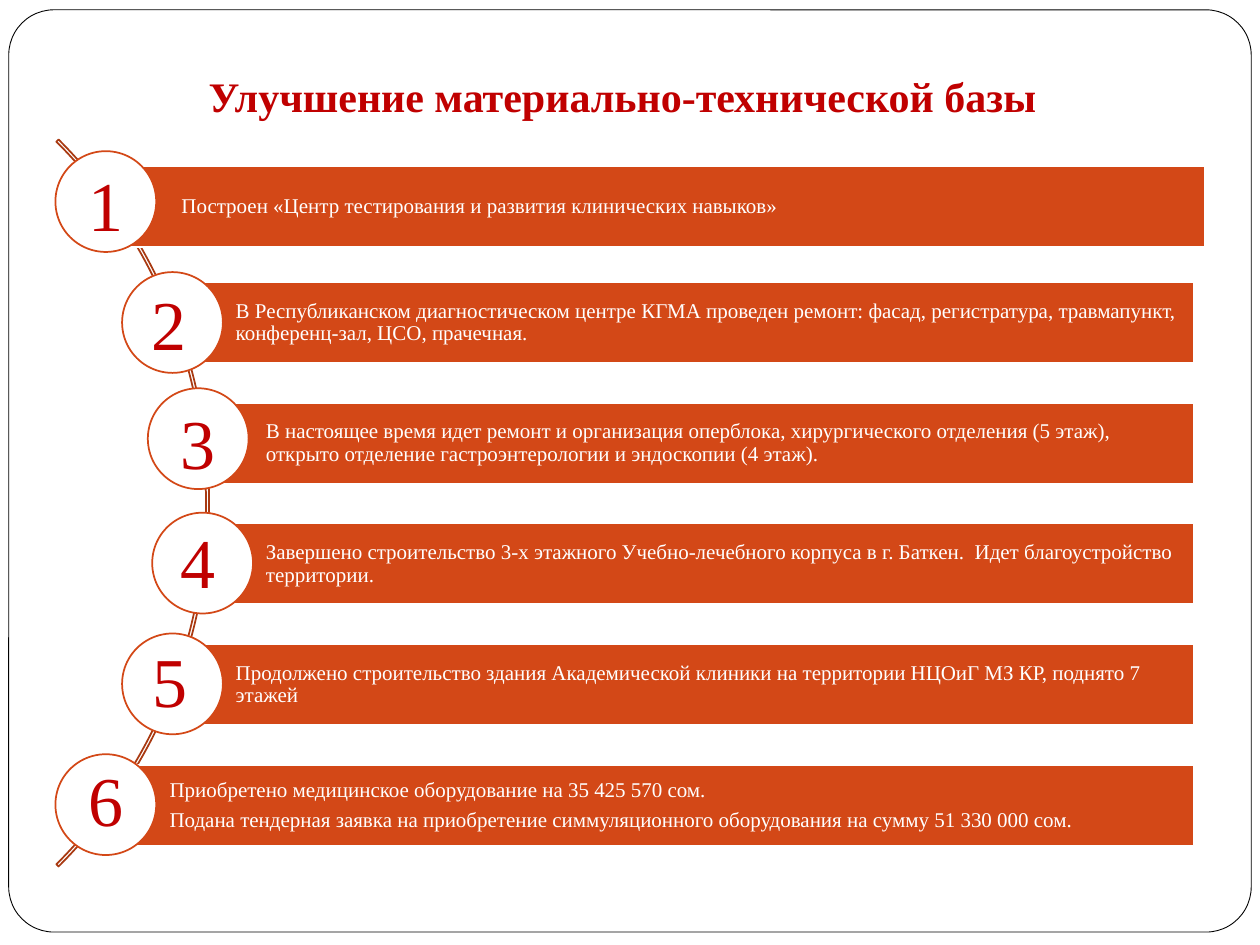
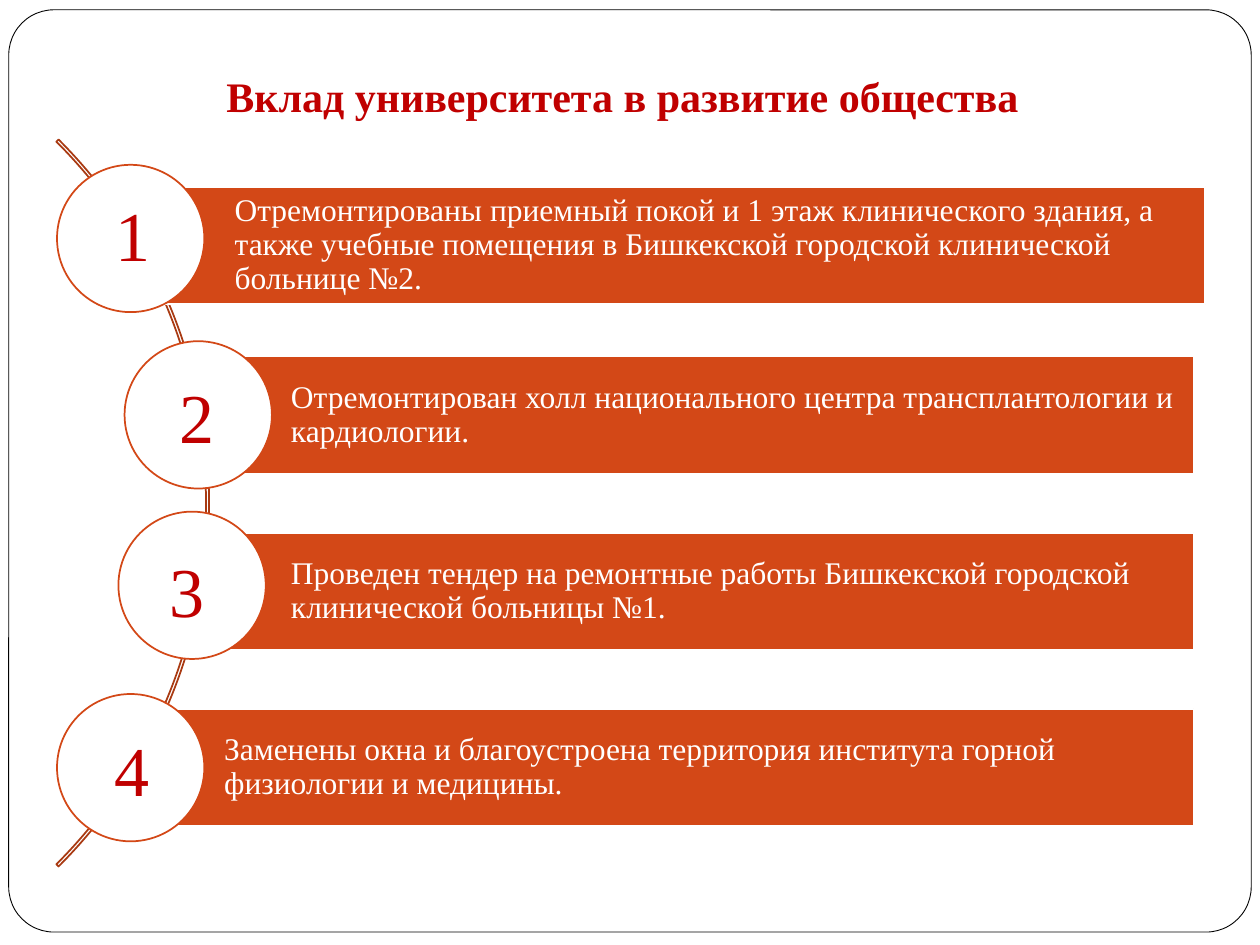
from dataclasses import dataclass

from pptx import Presentation
from pptx.dml import color
from pptx.enum import shapes, text
from pptx.util import Pt

FONT = "Times New Roman"
WHITE, BLACK = "FFFFFF", "000000"
ORANGE, RUST, RED = "D34817", "A93A12", "C00000"
BAR_RIGHT, FIRST_BAR_RIGHT = 682, 688.8
NUMBER_W, NUMBER_H = 64, 55.4


@dataclass(frozen=True)
class Step:
    lines: tuple[str, ...]
    bar_left: float
    circle_left: float
    circle_top: float
    number_center: float


@dataclass(frozen=True)
class StepList:
    title: str
    size: float
    bar_h: float
    first_bar_top: float
    second_bar_top: float
    bar_pitch: float
    indent: float
    margin: float
    circle: float
    number_tops: tuple[float, ...]
    steps: tuple[Step, ...]

    def bar_top(self, i: int) -> float:
        return self.second_bar_top + (i - 1) * self.bar_pitch if i else self.first_bar_top


FACILITIES = StepList(
    "Улучшение материально-технической базы",
    12, 46, 95, 161.3, 68.95, 36.7, 2.2, 57.6,
    tuple(88.6 + 68 * i for i in range(6)),
    (
        Step(("Построен «Центр тестирования и развития клинических навыков»",),
             67, 31.7, 86.4, 60.8),
        Step(("В Республиканском диагностическом центре КГМА проведен ремонт: фасад, "
              "регистратура, травмапункт, конференц-зал, ЦСО, прачечная.",),
             98, 69.8, 155.5, 96.8),
        Step(("В настоящее время идет ремонт и организация оперблока, хирургического отделения "
              "(5 этаж), открыто отделение гастроэнтерологии и эндоскопии (4 этаж).",),
             115.2, 84.5, 221.9, 113.4),
        Step(("Завершено строительство 3-х этажного Учебно-лечебного корпуса в г. Баткен.  "
              "Идет благоустройство территории.",),
             115.2, 87, 293, 113),
        Step(("Продолжено строительство здания Академической клиники на территории НЦОиГ МЗ КР, "
              "поднято 7 этажей",),
             98, 69.8, 362, 97.4),
        Step(("Приобретено медицинское оборудование на 35 425 570 сом.",
              "Подана тендерная заявка на приобретение симмуляционного оборудования "
              "на сумму 51 330 000 сом."),
             60.2, 31.7, 431, 60.8),
    ),
)

COMMUNITY = StepList(
    "Вклад университета в развитие общества",
    18, 67, 106.8, 203.8, 100.6, 53.3, 3.4, 84.2,
    (105.8, 210.2, 309.6, 411.8),
    (
        Step(("Отремонтированы приемный покой и 1 этаж клинического здания, а также учебные "
              "помещения в Бишкекской городской клинической больнице №2.",),
             80.8, 32.6, 94.2, 76),
        Step(("Отремонтирован холл национального центра трансплантологии и кардиологии.",),
             113, 71.2, 195, 112.6),
        Step(("Проведен тендер на ремонтные работы Бишкекской городской клинической "
              "больницы №1.",),
             113, 67.7, 292.4, 107),
        Step(("Заменены окна и благоустроена территория института горной физиологии "
              "и медицины.",),
             74.8, 32.6, 396.6, 75.6),
    ),
)


def rgb(value: str) -> color.RGBColor:
    return color.RGBColor.from_string(value)


def add_shape(slide, kind, left: float, top: float, width: float, height: float, *,
              fill: str | None, line: str, weight: float = 1, adjust: tuple = ()):
    sp = slide.shapes.add_shape(kind, Pt(left), Pt(top), Pt(width), Pt(height))
    sp.shadow.inherit = False
    for i, value in enumerate(adjust):
        sp.adjustments[i] = value
    if fill:
        sp.fill.solid()
        sp.fill.fore_color.rgb = rgb(fill)
    else:
        sp.fill.background()
    sp.line.color.rgb = rgb(line)
    sp.line.width = Pt(weight)
    return sp


def add_box(slide, left: float, top: float, width: float, height: float):
    return slide.shapes.add_textbox(Pt(left), Pt(top), Pt(width), Pt(height))


def write(sp, *lines: str, size: float, ink: str, bold: bool = False,
          align=text.PP_ALIGN.CENTER, anchor=text.MSO_ANCHOR.TOP,
          insets: tuple = (7.2, 3.6, 7.2, 3.6), spacing: float = 1, after: float = 0) -> None:
    tf = sp.text_frame
    tf.word_wrap = True
    tf.vertical_anchor = anchor
    tf.margin_left, tf.margin_top, tf.margin_right, tf.margin_bottom = map(Pt, insets)
    for i, line in enumerate(lines):
        p = tf.add_paragraph() if i else tf.paragraphs[0]
        p.alignment = align
        p.line_spacing = spacing
        p.space_after = Pt(after)
        r = p.add_run()
        r.text = line
        r.font.name = FONT
        r.font.size = Pt(size)
        r.font.bold = bold
        r.font.color.rgb = rgb(ink)


def add_frame(slide, title: str) -> None:
    add_shape(slide, shapes.MSO_SHAPE.ROUNDED_RECTANGLE, 5, 5.6, 710, 527,
              fill=WHITE, line=BLACK, weight=0.5, adjust=(0.049,))
    write(add_box(slide, 14.4, 9.4, 682.6, 67), title, size=24, ink=RED, bold=True,
          anchor=text.MSO_ANCHOR.BOTTOM, insets=(7.2, 3.6, 7.2, 7.2))
    add_shape(slide, shapes.MSO_SHAPE.BLOCK_ARC, -468, -6.3, 587.5, 587.5,
              fill=None, line=RUST, adjust=(189, 27, 0.003))


def add_step(slide, content: StepList, i: int, step: Step) -> None:
    right = BAR_RIGHT if i else FIRST_BAR_RIGHT
    bar = add_shape(slide, shapes.MSO_SHAPE.RECTANGLE, step.bar_left, content.bar_top(i),
                    right - step.bar_left, content.bar_h, fill=ORANGE, line=WHITE)
    write(bar, *step.lines, size=content.size, ink=WHITE, align=text.PP_ALIGN.LEFT,
          anchor=text.MSO_ANCHOR.MIDDLE, insets=(content.indent, *[content.margin] * 3),
          spacing=0.9, after=content.size * 0.35)
    add_shape(slide, shapes.MSO_SHAPE.OVAL, step.circle_left, step.circle_top,
              content.circle, content.circle, fill=WHITE, line=ORANGE)
    number = add_box(slide, step.number_center - NUMBER_W / 2, content.number_tops[i],
                     NUMBER_W, NUMBER_H)
    write(number, str(i + 1), size=40, ink=RED)


def main() -> None:
    prs = Presentation()
    prs.slide_width, prs.slide_height = Pt(720), Pt(540)
    for content in (FACILITIES, COMMUNITY):
        slide = prs.slides.add_slide(prs.slide_layouts[6])
        add_frame(slide, content.title)
        for i, step in enumerate(content.steps):
            add_step(slide, content, i, step)
    prs.save("out.pptx")


if __name__ == "__main__":
    main()
